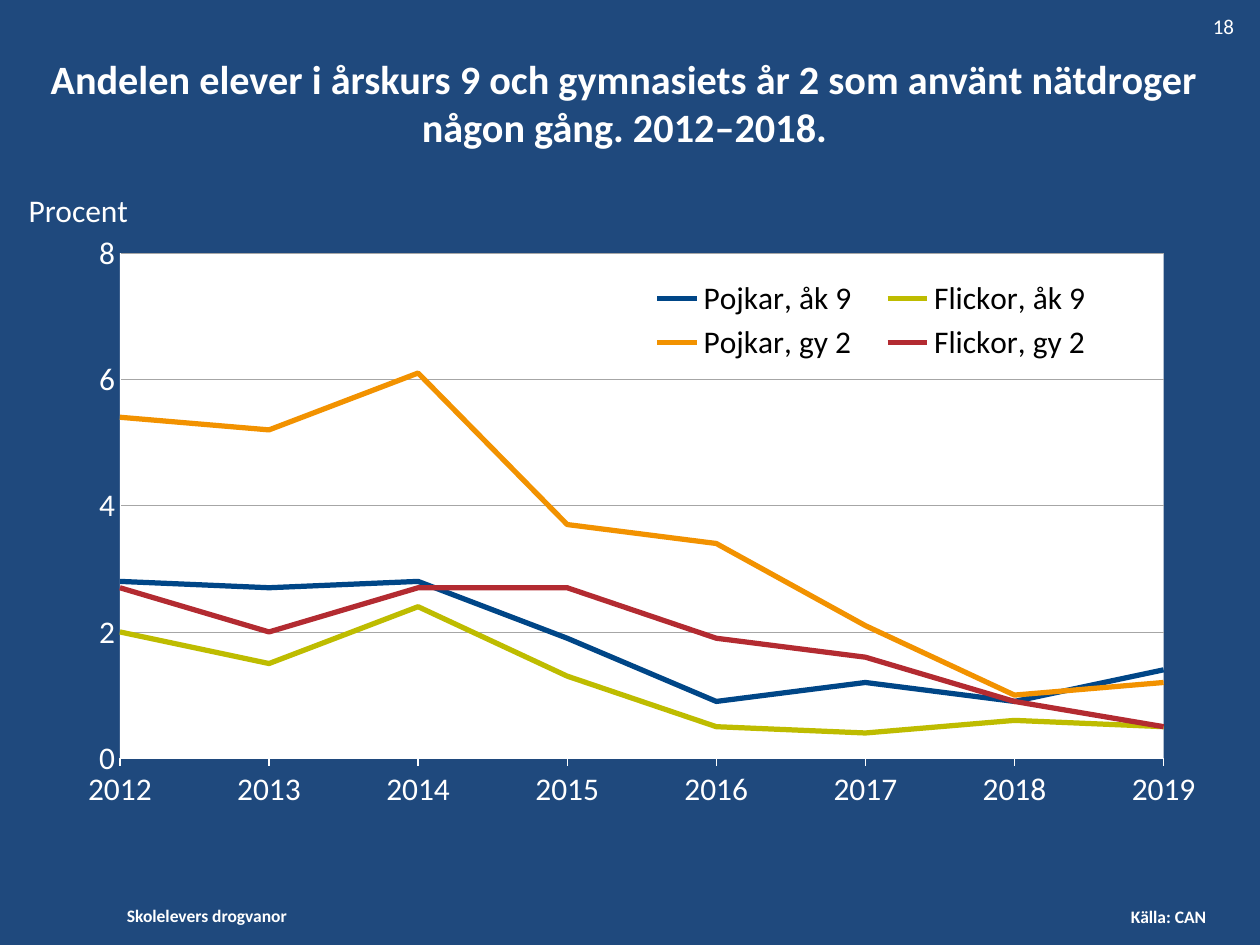
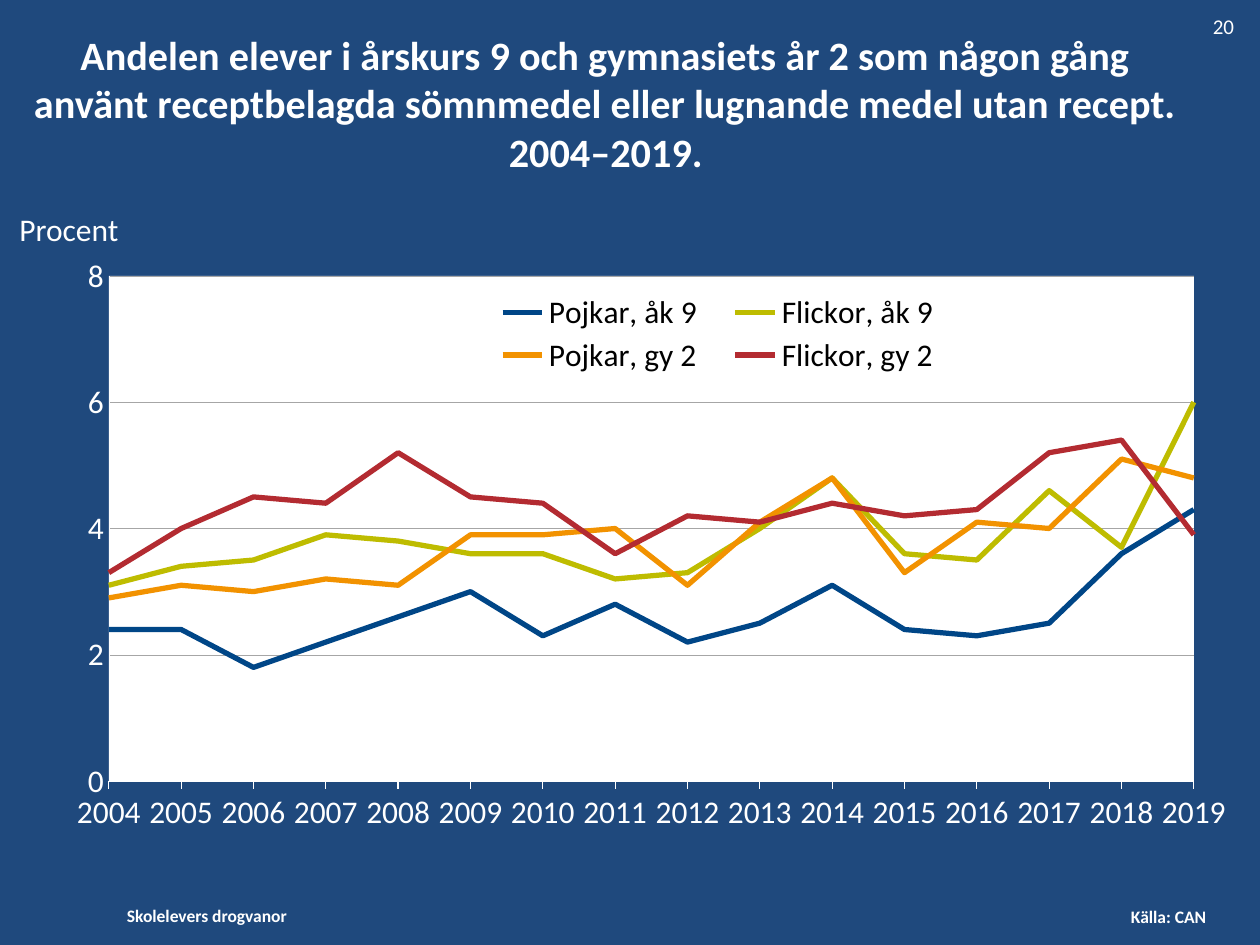
"""Builds two line-chart slides on pupils' drug habits."""
from dataclasses import dataclass

from lxml import etree
from pptx import Presentation
from pptx.chart.data import CategoryChartData
from pptx.dml.color import RGBColor as RGB
from pptx.enum.chart import XL_CHART_TYPE, XL_LEGEND_POSITION, XL_TICK_MARK
from pptx.enum.text import MSO_ANCHOR, MSO_AUTO_SIZE, PP_ALIGN
from pptx.oxml import parse_xml
from pptx.oxml.ns import nsdecls, qn
from pptx.util import Cm, Pt


@dataclass(frozen=True)
class Theme:
    font: str = "Calibri"
    background: str = "1F497D"
    light: str = "FFFFFF"
    dark: str = "000000"
    grid: str = "A6A6A6"
    title: int = 23
    label: int = 18
    page: int = 12
    footer: int = 10


THEME = Theme()
SERIES = [
    ("Pojkar, åk 9", "004687"),
    ("Flickor, åk 9", "BEBC00"),
    ("Pojkar, gy 2", "F29200"),
    ("Flickor, gy 2", "B32B31"),
]
PLOT = (0.062, 0.089, 0.914, 0.794)
FOOTERS = [
    ("Skolelevers drogvanor", (2.31, 18.11, 4.2, 0.69)),
    ("Källa: CAN", (22.55, 18.14, 2.39, 0.69)),
]
PAGE_BOX = (24.2, 0.15, 1.19, 0.76)
SLIDES = [
    {
        "title": "Andelen elever i årskurs 9 och gymnasiets år 2 som använt "
                 "nätdroger någon gång. 2012–2018.",
        "title_box": (0.1, 0.76, 24.99, 2.62),
        "unit_box": (0.33, 3.73, 2.97, 1.02),
        "chart_box": (0.99, 3.96, 23.11, 12.83),
        "legend": (0.51, 0.12, 0.42, 0.15),
        "page": "18",
        "years": range(2012, 2020),
        "values": [
            (2.8, 2.7, 2.8, 1.9, 0.9, 1.2, 0.9, 1.4),
            (2, 1.5, 2.4, 1.3, 0.5, 0.4, 0.6, 0.5),
            (5.4, 5.2, 6.1, 3.7, 3.4, 2.1, 1, 1.2),
            (2.7, 2, 2.7, 2.7, 1.9, 1.6, 0.9, 0.5),
        ],
    },
    {
        "title": "Andelen elever i årskurs 9 och gymnasiets år 2 som någon gång "
                 "använt receptbelagda sömnmedel eller lugnande medel utan "
                 "recept. 2004–2019.",
        "title_box": (0.3, 0.76, 23.83, 2.62),
        "unit_box": (0.14, 4.11, 3.5, 1.02),
        "chart_box": (0.71, 4.42, 24, 12.83),
        "legend": (0.37, 0.11, 0.41, 0.14),
        "page": "20",
        "years": range(2004, 2020),
        "values": [
            (2.4, 2.4, 1.8, 2.2, 2.6, 3, 2.3, 2.8,
             2.2, 2.5, 3.1, 2.4, 2.3, 2.5, 3.6, 4.3),
            (3.1, 3.4, 3.5, 3.9, 3.8, 3.6, 3.6, 3.2,
             3.3, 4, 4.8, 3.6, 3.5, 4.6, 3.7, 6),
            (2.9, 3.1, 3, 3.2, 3.1, 3.9, 3.9, 4,
             3.1, 4.1, 4.8, 3.3, 4.1, 4, 5.1, 4.8),
            (3.3, 4, 4.5, 4.4, 5.2, 4.5, 4.4, 3.6,
             4.2, 4.1, 4.4, 4.2, 4.3, 5.2, 5.4, 3.9),
        ],
    },
]


def cm(box):
    return [Cm(v) for v in box]


def set_font(font, size, color=THEME.light, bold=False):
    font.name, font.size, font.bold = THEME.font, Pt(size), bold
    font.color.rgb = RGB.from_string(color)


def set_line(line, color, width):
    line.color.rgb = RGB.from_string(color)
    line.width = Pt(width)


def add_text(slide, text, box, size, bold=False, anchor=MSO_ANCHOR.TOP):
    sp = slide.shapes.add_textbox(*cm(box))
    tf = sp.text_frame
    tf.word_wrap, tf.vertical_anchor = True, anchor
    tf.text = text
    set_font(tf.paragraphs[0].runs[0].font, size, bold=bold)
    return sp


def add_title(slide, text, box):
    sp = slide.shapes.title
    sp.left, sp.top, sp.width, sp.height = cm(box)
    tf = sp.text_frame
    tf.text = text
    tf.auto_size, tf.vertical_anchor = MSO_AUTO_SIZE.NONE, MSO_ANCHOR.MIDDLE
    p = tf.paragraphs[0]
    p.alignment = PP_ALIGN.CENTER
    set_font(p.runs[0].font, THEME.title, bold=True)


def manual_layout(box, inner=False):
    layout = parse_xml(f'<c:layout {nsdecls("c")}><c:manualLayout/></c:layout>')
    settings = [("layoutTarget", "inner")] if inner else []
    settings += [("xMode", "edge"), ("yMode", "edge"), *zip("xywh", box)]
    for tag, value in settings:
        etree.SubElement(layout[0], qn(f"c:{tag}"), val=str(value))
    return layout


def place(parent, index, box, inner=False):
    for old in parent.findall(qn("c:layout")):
        parent.remove(old)
    parent.insert(index, manual_layout(box, inner))


def shape_fill(fill):
    return parse_xml(f'<c:spPr {nsdecls("c", "a")}>{fill}<a:ln><a:noFill/></a:ln></c:spPr>')


def style_axes(chart):
    value, category = chart.value_axis, chart.category_axis
    axis = chart._chartSpace.find(f".//{qn('c:valAx')}")
    for old in axis.findall(qn("c:crossBetween")):
        axis.remove(old)
    axis.find(qn("c:crosses")).addnext(
        parse_xml(f'<c:crossBetween {nsdecls("c")} val="midCat"/>'))
    value.minimum_scale, value.maximum_scale, value.major_unit = 0, 8, 2
    value.major_tick_mark = XL_TICK_MARK.NONE
    category.major_tick_mark = XL_TICK_MARK.OUTSIDE
    value.tick_labels.number_format = "0"
    value.tick_labels.number_format_is_linked = False
    set_line(value.major_gridlines.format.line, THEME.grid, 0.23)
    for ax, width in ((value, 0.23), (category, 0.75)):
        set_font(ax.tick_labels.font, THEME.label)
        set_line(ax.format.line, THEME.light, width)


def add_line_chart(slide, content):
    data = CategoryChartData(number_format="0.0")
    data.categories = [str(year) for year in content["years"]]
    for (name, _), values in zip(SERIES, content["values"]):
        data.add_series(name, values)
    chart = slide.shapes.add_chart(
        XL_CHART_TYPE.LINE, *cm(content["chart_box"]), data).chart
    set_font(chart.font, THEME.label)
    chart.has_title = False
    chart.plots[0].vary_by_categories = False
    style_axes(chart)
    for series, (_, color) in zip(chart.plots[0].series, SERIES):
        series.smooth = False
        set_line(series.format.line, color, 3)
    chart.has_legend = True
    chart.legend.position = XL_LEGEND_POSITION.TOP
    set_font(chart.legend.font, THEME.label, THEME.dark)
    space = chart._chartSpace
    place(space.find(f".//{qn('c:legend')}"), 1, content["legend"])
    area = space.find(f".//{qn('c:plotArea')}")
    place(area, 0, PLOT, inner=True)
    area.append(shape_fill(
        f'<a:solidFill><a:srgbClr val="{THEME.light}"/></a:solidFill>'))
    space.find(qn("c:chart")).addnext(shape_fill("<a:noFill/>"))


def add_footers(layout, slide):
    for text, box in FOOTERS:
        sp = add_text(slide, text, box, THEME.footer, bold=True)
        layout.shapes.element.append(sp.element)


def main():
    prs = Presentation()
    prs.slide_width, prs.slide_height = Cm(25.4), Cm(19.05)
    fill = prs.slide_master.background.fill
    fill.solid()
    fill.fore_color.rgb = RGB.from_string(THEME.background)
    layout = prs.slide_layouts[5]
    for i, content in enumerate(SLIDES):
        slide = prs.slides.add_slide(layout)
        if i == 0:
            add_footers(layout, slide)
        add_title(slide, content["title"], content["title_box"])
        add_line_chart(slide, content)
        add_text(slide, "Procent", content["unit_box"], THEME.label,
                 anchor=MSO_ANCHOR.MIDDLE)
        add_text(slide, content["page"], PAGE_BOX, THEME.page)
    prs.save("out.pptx")


if __name__ == "__main__":
    main()
